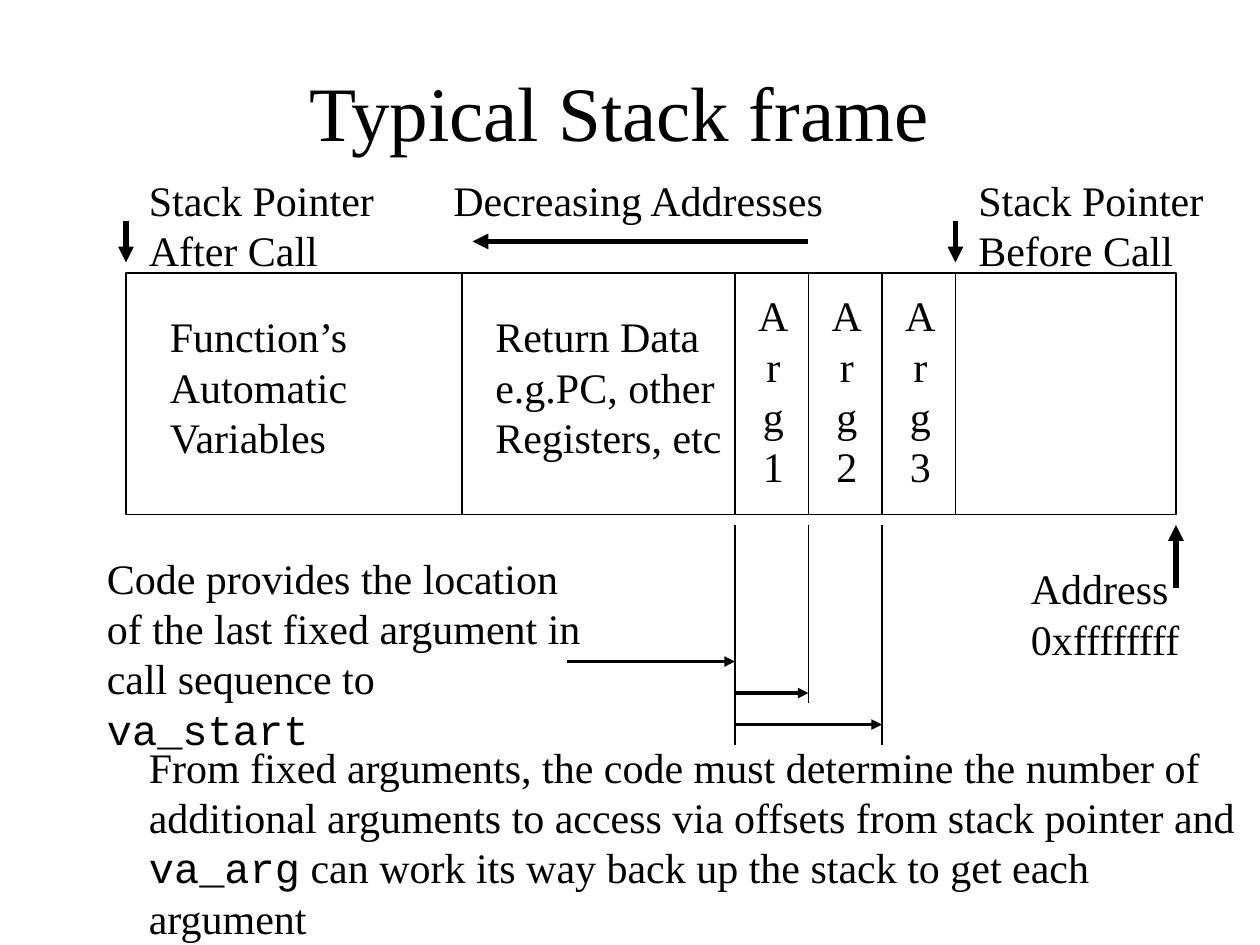
from dataclasses import dataclass
from itertools import accumulate

from lxml.etree import SubElement
from pptx import Presentation
from pptx.dml.color import RGBColor
from pptx.enum.shapes import MSO_CONNECTOR as Connector, MSO_SHAPE as Shape
from pptx.enum.text import MSO_ANCHOR as Anchor, PP_ALIGN as Align
from pptx.oxml.ns import qn
from pptx.util import Inches, Pt


@dataclass(frozen=True)
class Theme:
    ink: RGBColor = RGBColor(0, 0, 0)
    paper: RGBColor = RGBColor(255, 255, 255)
    font: str = "Times New Roman"
    code_font: str = "Courier New"
    title: int = 44
    body: int = 24
    thin: float = 0.75
    medium: float = 2
    thick: float = 3


THEME = Theme()
UNITS_PER_INCH = 12  # every length below is in grid units of 1/12 inch

TITLE = "Typical Stack frame"
TITLE_BOX = (8, 3, 102, 15)

# Stack cells from low to high addresses
CELL_WIDTHS = [32, 26, 7, 7, 7, 21]
STACK_LEFT, STACK_TOP, STACK_HEIGHT = 12, 26, 23
EDGES = list(accumulate(CELL_WIDTHS, initial=STACK_LEFT))
STACK_END, ARG1, ARG2, ARG3, CALLER, TOP_ADDRESS = EDGES[0], *EDGES[2:]
BELOW_STACK = STACK_TOP + STACK_HEIGHT + 1

# Paragraphs, box (left, top, width, height), wrap; backticks mark code
LABELS = [
    (["Decreasing Addresses"], (42, 16, 40, 6), True),
    (["Stack Pointer", "After Call"], (STACK_END + 1, 16, 24, 10.8), False),
    (["Stack Pointer", "Before Call"], (CALLER + 1, 16, 24, 10.8), True),
    (["Function’s", "Automatic", "Variables"], (15, 29, 19.6, 15.6), False),
    (["Return Data", "e.g.PC, other", "Registers, etc"], (46, 29, 24, 15.6), False),
    (["Address", "0xffffffff"], (97, 53, 18, 10.8), True),
    (["Code provides the location", "of the last fixed argument in",
      "call sequence to `va_start`"], (9, 52, 48, 20.6), True),
    (["From fixed arguments, the code must determine the number of",
      "additional arguments to access via offsets from stack pointer and "
      "`va_arg` can work its way back up the stack to get each argument"],
     (13, 70, 107, 20.6), True),
]
ARGUMENTS = {"Arg1": ARG1, "Arg2": ARG2, "Arg3": ARG3}

# Start, end, weight, arrowhead
LINES = [
    ((STACK_END, 21), (STACK_END, 25), THEME.thick, True),
    ((CALLER, 21), (CALLER, 25), THEME.thick, True),
    ((ARG2, 23), (45, 23), THEME.thick, True),
    ((TOP_ADDRESS, 56), (TOP_ADDRESS, BELOW_STACK), THEME.thick, True),
    ((54, 63), (ARG1, 63), THEME.medium, True),
    ((ARG1, 66), (ARG2, 66), THEME.medium, True),
    ((ARG1, 69), (ARG3, 69), THEME.medium, True),
    ((ARG1, 71), (ARG1, BELOW_STACK), THEME.thin, False),
    ((ARG2, 67), (ARG2, BELOW_STACK), THEME.thin, False),
    ((ARG3, 71), (ARG3, BELOW_STACK), THEME.thin, False),
]


def grid(*units):
    return [Inches(unit / UNITS_PER_INCH) for unit in units]


def write_text(shape, paragraphs, *, size=THEME.body, align=Align.LEFT,
               anchor=Anchor.TOP, wrap=True):
    frame = shape.text_frame
    frame.word_wrap = wrap
    frame.vertical_anchor = anchor
    for index, text in enumerate(paragraphs):
        paragraph = frame.add_paragraph() if index else frame.paragraphs[0]
        paragraph.alignment = align
        for part, words in enumerate(text.split("`")):
            if not words:
                continue
            run = paragraph.add_run()
            run.text = words
            run.font.name = THEME.code_font if part % 2 else THEME.font
            run.font.size = Pt(size)
            run.font.color.rgb = THEME.ink


def add_label(slide, paragraphs, box, **text_format):
    write_text(slide.shapes.add_textbox(*grid(*box)), paragraphs, **text_format)


def add_cell(slide, left, width):
    cell = slide.shapes.add_shape(
        Shape.RECTANGLE, *grid(left, STACK_TOP, width, STACK_HEIGHT))
    cell.shadow.inherit = False
    cell.fill.background()
    cell.line.color.rgb = THEME.ink
    cell.line.width = Pt(THEME.thin)


def add_line(slide, start, end, weight, arrow):
    connector = slide.shapes.add_connector(Connector.STRAIGHT, *grid(*start, *end))
    connector.line.color.rgb = THEME.ink
    connector.line.width = Pt(weight)
    properties = connector.element.spPr
    if arrow:
        SubElement(properties.find(qn("a:ln")), qn("a:tailEnd"), type="triangle")
    SubElement(properties, qn("a:effectLst"))


def main():
    presentation = Presentation()
    presentation.slide_width, presentation.slide_height = grid(120, 90)
    slide = presentation.slides.add_slide(presentation.slide_layouts[5])
    slide.background.fill.solid()
    slide.background.fill.fore_color.rgb = THEME.paper

    title = slide.shapes.title
    title.left, title.top, title.width, title.height = grid(*TITLE_BOX)
    write_text(title, [TITLE], size=THEME.title, align=Align.CENTER,
               anchor=Anchor.MIDDLE)

    for left, width in zip(EDGES, CELL_WIDTHS):
        add_cell(slide, left, width)
    for paragraphs, box, wrap in LABELS:
        add_label(slide, paragraphs, box, wrap=wrap)
    for name, left in ARGUMENTS.items():
        add_label(slide, list(name), (left + 1, STACK_TOP + 1, 5.3, 20.4),
                  align=Align.CENTER, wrap=False)
    for line in LINES:
        add_line(slide, *line)

    presentation.save("out.pptx")


if __name__ == "__main__":
    main()
